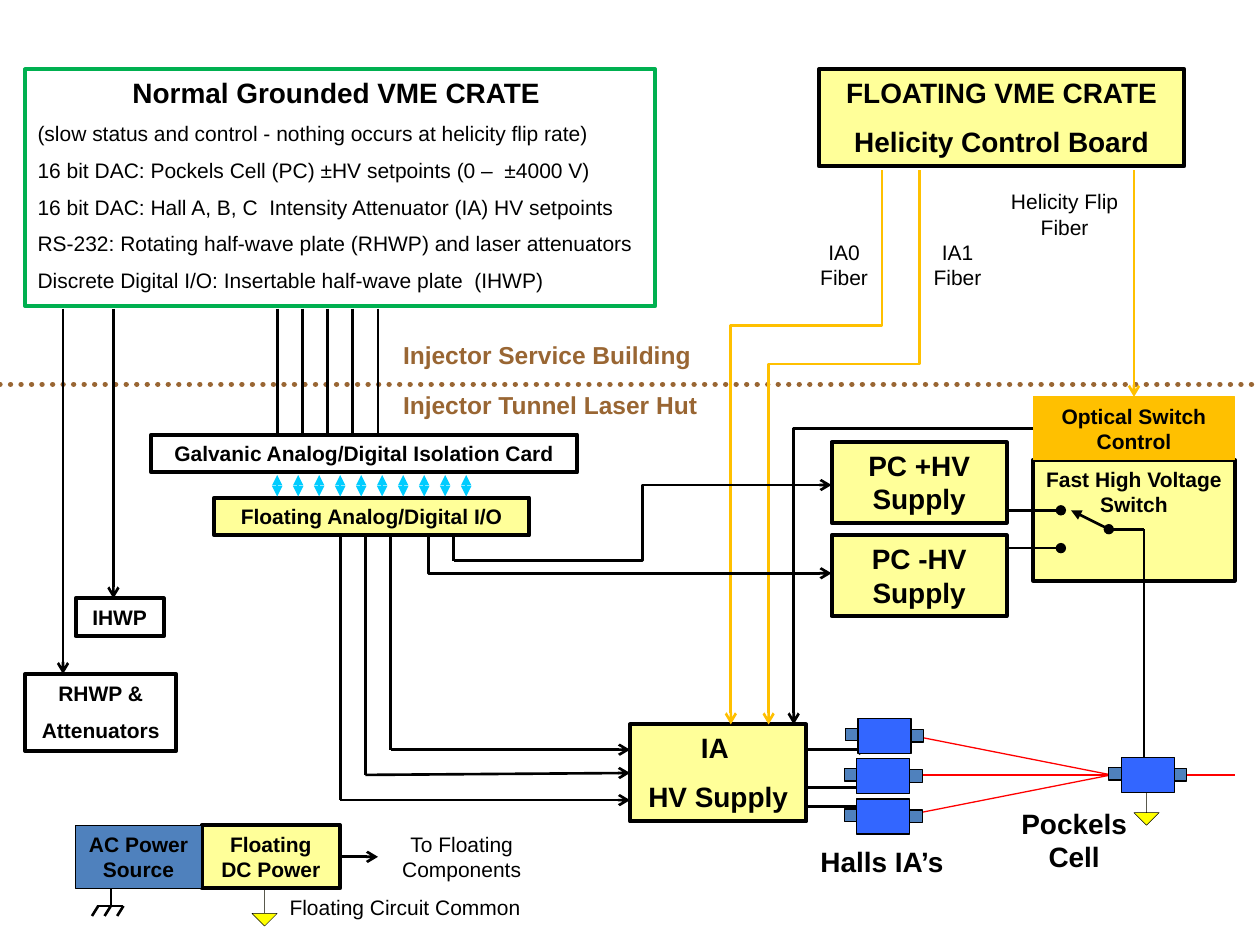
from pptx import Presentation
from pptx.dml.color import RGBColor
from pptx.enum.dml import MSO_LINE
from pptx.enum.shapes import MSO_CONNECTOR as LINK, MSO_SHAPE as FORM
from pptx.enum.text import MSO_ANCHOR, PP_ALIGN
from pptx.oxml.ns import qn
from pptx.oxml.xmlchemy import OxmlElement
from pptx.util import Cm, Pt

MODULE = Cm(2.54)  # positions and sizes are multiples of this
COLORS = {
    "black": "000000", "cream": "FFFF99", "yellow": "FFFF00", "green": "00B050",
    "amber": "FFC000", "brown": "996633", "cyan": "00CCFF", "red": "FF0000",
    "blue": "3366FF", "steel": "4F81BD",
}
FRAME = {"word_wrap": True, "vertical_anchor": MSO_ANCHOR.TOP}
SPACING = 0.55  # gap between paragraphs, as a share of the text size

CRATE_NOTES = [
    "(slow status and control - nothing occurs at helicity flip rate)",
    "16 bit DAC: Pockels Cell (PC) ±HV setpoints (0 –  ±4000 V)",
    "16 bit DAC: Hall A, B, C  Intensity Attenuator (IA) HV setpoints",
    "RS-232: Rotating half-wave plate (RHWP) and laser attenuators",
    "Discrete Digital I/O: Insertable half-wave plate  (IHWP)",
]


def lengths(*modules):
    return [round(m * MODULE) for m in modules]


def rgb(name):
    return RGBColor.from_string(COLORS[name])


def write(frame, paragraphs, size=12, bold=True, color="black", align=PP_ALIGN.CENTER):
    for name, value in FRAME.items():
        setattr(frame, name, value)
    for index, text in enumerate(paragraphs):
        paragraph = frame.paragraphs[0] if index == 0 else frame.add_paragraph()
        paragraph.text = text
        paragraph.alignment = align
        if index:
            paragraph.space_before = Pt(round(size * SPACING, 1))
        style = {"name": "Arial", "size": Pt(size), "bold": bold}
        for name, value in style.items():
            setattr(paragraph.font, name, value)
        paragraph.font.color.rgb = rgb(color)


def block(shapes, place, fill=None, line="black", width=2.25, form=FORM.RECTANGLE):
    shape = shapes.add_shape(form, *lengths(*place))
    shape.shadow.inherit = False
    if fill:
        shape.fill.solid()
        shape.fill.fore_color.rgb = rgb(fill)
    else:
        shape.fill.background()
    shape.line.color.rgb = rgb(line)
    shape.line.width = Pt(width)
    return shape


def box(shapes, place, *paragraphs, size=12, **look):
    shape = block(shapes, place, **look)
    write(shape.text_frame, paragraphs, size)
    return shape


def label(shapes, place, text, **style):
    write(shapes.add_textbox(*lengths(*place)).text_frame, [text], **style)


def wire(shapes, start, end, color="black", width=1.5, head=None, tail=None,
         kind=LINK.STRAIGHT):
    link = shapes.add_connector(kind, *lengths(*start, *end))
    link.line.color.rgb = rgb(color)
    link.line.width = Pt(width)
    for tag, arrow in (("a:headEnd", head), ("a:tailEnd", tail)):
        if arrow:
            tip = OxmlElement(tag)
            tip.set("type", arrow)
            link.line._get_or_add_ln().append(tip)
    link._element.spPr.append(OxmlElement("a:effectLst"))
    return link


def elbow(shapes, start, end, bend=0.5, **look):
    """Three-part wire that leaves sideways and turns at the share bend."""
    link = wire(shapes, start, end, kind=LINK.ELBOW, tail="arrow", **look)
    guide = OxmlElement("a:gd")
    guide.set("name", "adj1")
    guide.set("fmla", f"val {round(bend * 100000)}")
    geometry = link._element.spPr.find(qn("a:prstGeom"))
    geometry.get_or_add_avLst().append(guide)
    return link


def drop(shapes, start, end, bend):
    """Fiber that leaves downwards: an elbow turned by a quarter."""
    (x1, y1), (x2, y2) = start, end
    cx, cy = (x1 + x2) / 2, (y1 + y2) / 2
    half_w, half_h = (y2 - y1) / 2, (x1 - x2) / 2
    link = elbow(shapes, (cx - half_w, cy - half_h), (cx + half_w, cy + half_h),
                 bend, color="amber")
    link._element.spPr.xfrm.set("rot", "5400000")


def common_symbol(shapes, x, y):
    arrow = block(shapes, (x, y, 0.2, 0.4), "yellow", width=0.25, form=FORM.DOWN_ARROW)
    arrow.adjustments[0] = 0
    arrow.adjustments[1] = 0.5


def ground_symbol(shapes):
    parts = shapes.add_group_shape().shapes
    wire(parts, (0.88, 7.01), (0.88, 7.19))
    wire(parts, (0.77, 7.19), (0.98, 7.19))
    for x in (0.78, 0.88, 0.98):
        wire(parts, (x, 7.19), (x - 0.05, 7.27))


def optical_cell(shapes, x, y):
    parts = shapes.add_group_shape().shapes
    block(parts, (x, y, 0.42, 0.28), "blue", width=0.75)
    block(parts, (x - 0.1, y + 0.08, 0.1, 0.1), "steel", width=0.75)
    block(parts, (x + 0.42, y + 0.09, 0.1, 0.1), "steel", width=0.75)


def draw_crates(shapes):
    box(shapes, (6.5, 0.55, 2.9, 0.77), "FLOATING VME CRATE", "Helicity Control Board",
        size=16, fill="cream")
    crate = box(shapes, (0.2, 0.55, 5, 1.88), "Normal Grounded VME CRATE ", *CRATE_NOTES,
                size=12, line="green")
    heading, *notes = crate.text_frame.paragraphs
    heading.font.size = Pt(16)
    for note in notes:
        note.font.bold = False
        note.alignment = PP_ALIGN.LEFT


def draw_border(shapes):
    border = wire(shapes, (0, 3.05), (10, 3.05), "brown", 3)
    border.line.dash_style = MSO_LINE.ROUND_DOT
    border.line._get_or_add_ln().set("cap", "rnd")
    for y, side in ((2.65, "Injector Service Building"), (3.05, "Injector Tunnel Laser Hut")):
        label(shapes, (3.1, y, 2.65, 0.34), side, size=14, color="brown", align=PP_ALIGN.LEFT)


def draw_controls(shapes):
    box(shapes, (1.2, 3.45, 3.38, 0.3), "Galvanic Analog/Digital Isolation Card")
    box(shapes, (1.7, 3.95, 2.5, 0.3), "Floating Analog/Digital I/O", fill="cream")
    box(shapes, (0.2, 5.35, 1.2, 0.61), "RHWP &", "Attenuators")
    box(shapes, (0.6, 4.75, 0.7, 0.3), "IHWP")
    for i in range(10):
        x = 2.2 + i / 6
        wire(shapes, (x, 3.77), (x, 3.94), "cyan", 1.25, head="triangle", tail="triangle")
    for i in range(5):
        x = 2.2 + 0.2 * i
        wire(shapes, (x, 2.45), (x, 3.45))
    for x, bottom in ((0.5, 5.35), (0.9, 4.75)):
        wire(shapes, (x, 2.45), (x, bottom), tail="arrow")


def draw_power(shapes):
    common_symbol(shapes, 2, 6.95)
    ground_symbol(shapes)
    dc_power = box(shapes, (1.6, 6.55, 1.1, 0.5), "Floating DC Power", fill="cream")
    box(shapes, (0.6, 6.55, 1, 0.5), "AC Power Source", fill="steel", width=0.75)
    label(shapes, (3, 6.55, 1.33, 0.5), "To Floating Components", bold=False)
    label(shapes, (2.2, 7.05, 2.2, 0.3), "Floating Circuit Common", bold=False,
          align=PP_ALIGN.LEFT)
    wire(shapes, (2.7, 6.8), (3, 6.8), tail="arrow").begin_connect(dc_power, 3)


def draw_supplies(shapes):
    for y, sign in ((3.51, "+"), (4.25, "-")):
        box(shapes, (6.6, y, 1.39, 0.64), f"PC {sign}HV Supply", size=16, fill="cream")
    box(shapes, (8.2, 3.65, 1.6, 0.96), "Fast High Voltage Switch", fill="cream")
    optical = box(shapes, (8.2, 3.15, 1.6, 0.5), "Optical Switch Control",
                  fill="amber", line="amber", width=0.75)
    ia_supply = box(shapes, (5, 5.75, 1.4, 0.77), "IA ", "HV Supply", size=16, fill="cream")

    for y in (4.05, 4.35):
        wire(shapes, (8.42, y), (8, y), head="oval")
    wire(shapes, (8.8, 4.2), (8.5, 4.05), head="oval", tail="triangle")
    wire(shapes, (9.08, 4.2), (8.8, 4.2))
    wire(shapes, (9.08, 6.12), (9.08, 4.2))

    drop(shapes, (7, 1.35), (5.8, 5.75), 0.28)
    drop(shapes, (7.3, 1.35), (6.1, 5.75), 0.35)
    wire(shapes, (9, 1.35), (9, 3.15), "amber", tail="arrow").end_connect(optical, 0)
    for place, fiber in (((6.4, 1.85, 0.6, 0.5), "IA0 Fiber"),
                         ((7.3, 1.85, 0.6, 0.5), "IA1 Fiber"),
                         ((7.9, 1.45, 1.1, 0.5), "Helicity Flip Fiber")):
        label(shapes, place, fiber, bold=False)

    trigger = wire(shapes, (8.2, 3.4), (6.3, 5.75), tail="arrow", kind=LINK.ELBOW)
    trigger._element.spPr.find(qn("a:prstGeom")).set("prst", "bentConnector2")
    elbow(shapes, (3.4, 4.25), (6.6, 4.55), bend=0)
    wire(shapes, (3.6, 4.25), (3.6, 4.45))
    elbow(shapes, (3.6, 4.45), (6.6, 3.85))
    for x, y in ((3.1, 5.95), (2.9, 6.15), (2.7, 6.35)):
        wire(shapes, (x, 4.25), (x, y))
        setpoint = wire(shapes, (x, y), (5, y), tail="arrow")
        if y == 6.15:
            setpoint.end_connect(ia_supply, 1)
    for y in (5.95, 6.25, 6.4):
        wire(shapes, (6.4, y), (6.9, y), tail="triangle")


def draw_optics(shapes):
    common_symbol(shapes, 9, 6.15)
    wire(shapes, (9.4, 6.15), (9.8, 6.15), "red", 0.75)
    for y in (5.85, 6.15, 6.45):
        wire(shapes, (7.3, y), (8.82, 6.15), "red", 0.75)
    for x, y in ((6.81, 5.7), (6.8, 6.02), (6.8, 6.34), (8.9, 6.01)):
        optical_cell(shapes, x, y)
    label(shapes, (8, 6.35, 1.05, 0.64), "Pockels\vCell", size=16)
    label(shapes, (6.4, 6.65, 1.2, 0.37), "Halls IA’s", size=16)


def main():
    deck = Presentation()
    deck.slide_width, deck.slide_height = Cm(25.4), Cm(19.05)
    shapes = deck.slides.add_slide(deck.slide_layouts[6]).shapes
    for draw in (draw_crates, draw_border, draw_controls, draw_power,
                 draw_supplies, draw_optics):
        draw(shapes)
    deck.save("out.pptx")


if __name__ == "__main__":
    main()
